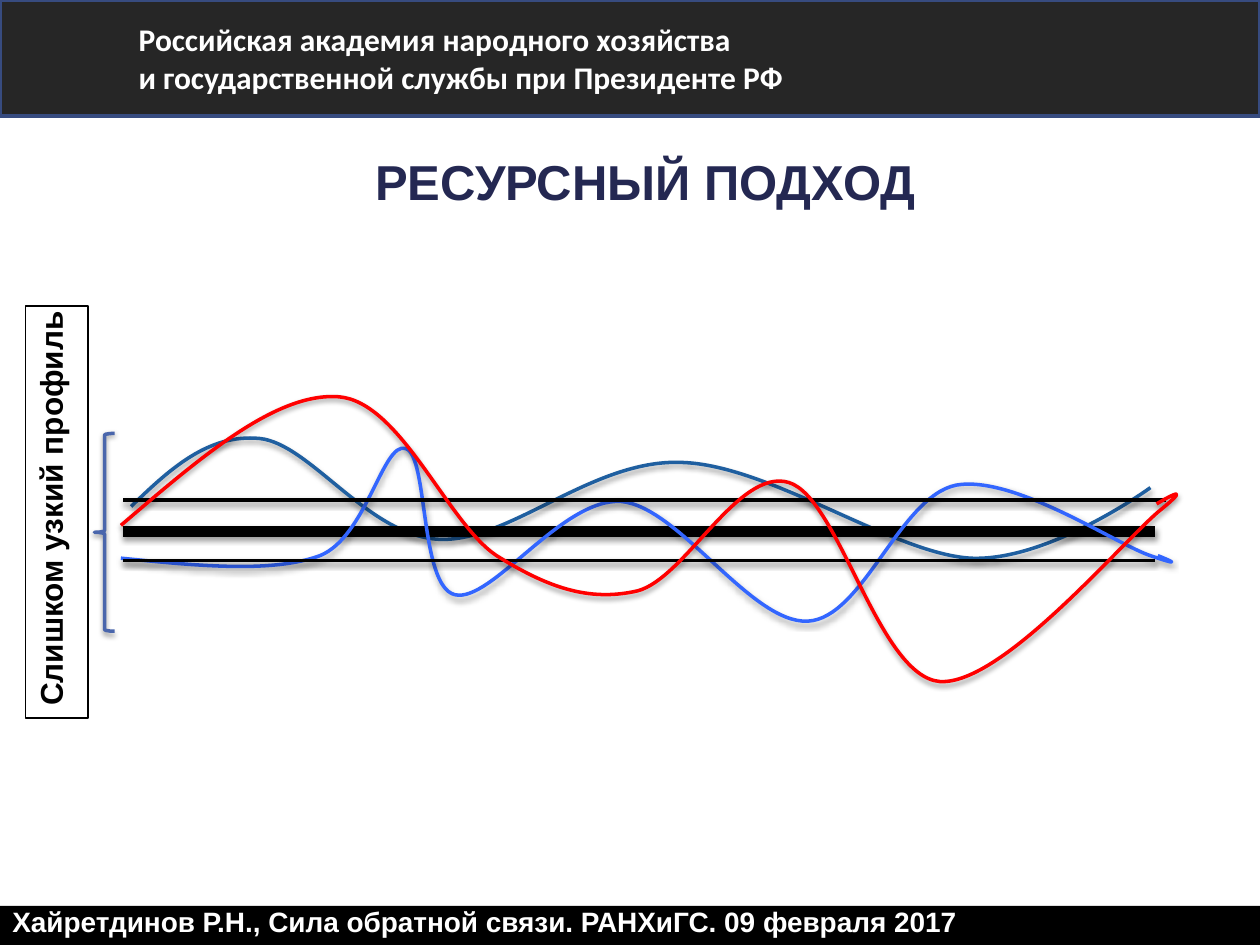
from lxml import etree
from pptx import Presentation
from pptx.dml.color import RGBColor
from pptx.enum.shapes import MSO_CONNECTOR, MSO_SHAPE
from pptx.enum.text import MSO_ANCHOR, MSO_AUTO_SIZE, PP_ALIGN
from pptx.oxml import parse_xml
from pptx.oxml.ns import nsdecls, qn
from pptx.util import Inches, Pt

RECT, BRACE = MSO_SHAPE.RECTANGLE, MSO_SHAPE.LEFT_BRACE
STRAIGHT = MSO_CONNECTOR.STRAIGHT
TOP, MIDDLE = MSO_ANCHOR.TOP, MSO_ANCHOR.MIDDLE
LEFT, CENTER = PP_ALIGN.LEFT, PP_ALIGN.CENTER
GROW = MSO_AUTO_SIZE.SHAPE_TO_FIT_TEXT
BLACK, WHITE = "000000", "FFFFFF"

# Start point, then two control points and an end point per curve segment
TEAL_WAVE = [
    (1.04, 4.02),
    (1.34, 3.73), (1.65, 3.44), (2.06, 3.48),
    (2.46, 3.52), (2.92, 4.25), (3.48, 4.28),
    (4.04, 4.31), (4.7, 3.64), (5.41, 3.67),
    (6.11, 3.69), (7.08, 4.39), (7.7, 4.43),
    (8.32, 4.46), (9.13, 3.87), (9.13, 3.87),
]
BLUE_WAVE = [
    (0.96, 4.43),
    (1.56, 4.49), (2.16, 4.55), (2.54, 4.41),
    (2.91, 4.26), (3.04, 3.5), (3.22, 3.56),
    (3.4, 3.61), (3.33, 4.65), (3.61, 4.72),
    (3.9, 4.79), (4.46, 3.95), (4.93, 3.98),
    (5.39, 4.02), (5.96, 4.95), (6.41, 4.93),
    (6.85, 4.91), (7.14, 3.94), (7.59, 3.85),
    (8.05, 3.77), (8.86, 4.32), (9.13, 4.41),
    (9.4, 4.5), (9.29, 4.45), (9.19, 4.41),
]
RED_WAVE = [
    (0.96, 4.17),
    (1.58, 3.64), (2.19, 3.11), (2.69, 3.15),
    (3.18, 3.19), (3.55, 4.15), (3.94, 4.41),
    (4.34, 4.66), (4.67, 4.78), (5.06, 4.69),
    (5.44, 4.59), (5.86, 3.71), (6.26, 3.83),
    (6.66, 3.95), (6.97, 5.37), (7.46, 5.41),
    (7.96, 5.44), (8.93, 4.27), (9.22, 4.04),
    (9.51, 3.8), (9.18, 4), (9.18, 4),
]


def rgb(color):
    return RGBColor.from_string(color)


def add_shadow(shape):
    """Give a shape or connector the soft shadow below it."""
    sp_pr = shape._element.spPr
    for old in sp_pr.findall(qn("a:effectLst")):
        sp_pr.remove(old)
    sp_pr.append(parse_xml(
        f'<a:effectLst {nsdecls("a")}>'
        f'<a:outerShdw blurRad="{Pt(3.1)}" dist="{Pt(1.6)}" dir="5400000" rotWithShape="0">'
        f'<a:srgbClr val="{BLACK}"><a:alpha val="38000"/></a:srgbClr>'
        '</a:outerShdw></a:effectLst>'))


class SlideBuilder:
    def __init__(self, slide, font="Arial"):
        self.shapes = slide.shapes
        self.font = font

    def shape(self, kind, x, y, w, h, fill=None, line=None, width=2):
        sp = self.shapes.add_shape(kind, Inches(x), Inches(y), Inches(w), Inches(h))
        self.style(sp, fill, line, width)
        return sp

    def style(self, sp, fill, line, width):
        sp.shadow.inherit = False
        if fill:
            sp.fill.solid()
            sp.fill.fore_color.rgb = rgb(fill)
        else:
            sp.fill.background()
        if line:
            sp.line.color.rgb = rgb(line)
            sp.line.width = Pt(width)
        else:
            sp.line.fill.background()

    def text_box(self, x, y, w, h, *args, **kwargs):
        sp = self.shapes.add_textbox(Inches(x), Inches(y), Inches(w), Inches(h))
        self.add_text(sp, *args, **kwargs)

    def add_text(self, sp, lines, size, color, font=None, align=LEFT, anchor=TOP, wrap=True):
        tf = sp.text_frame
        tf.word_wrap = wrap
        if not wrap:
            tf.auto_size = GROW
        tf.vertical_anchor = anchor
        p = tf.paragraphs[0]
        p.alignment = align
        for i, line in enumerate(lines):
            if i:
                p.add_line_break()
            r = p.add_run()
            r.text = line
            r.font.name = font or self.font
            r.font.size = Pt(size)
            r.font.bold = True
            r.font.color.rgb = rgb(color)

    def level(self, x1, x2, y, width):
        """Draw a horizontal black line."""
        line = self.shapes.add_connector(STRAIGHT, Inches(x1), Inches(y), Inches(x2), Inches(y))
        line.line.color.rgb = rgb(BLACK)
        line.line.width = Pt(width)
        add_shadow(line)

    def wave(self, points, color):
        """Draw an open outline whose points are grouped into cubic curves."""
        start, *rest = [(Inches(x), Inches(y)) for x, y in points]
        builder = self.shapes.build_freeform(*start)
        builder.add_line_segments(rest, close=False)
        sp = builder.convert_to_shape()
        outline = sp._element.find(".//" + qn("a:path"))
        segments = outline.findall(qn("a:lnTo"))
        for i in range(0, len(segments), 3):
            curve = etree.SubElement(outline, qn("a:cubicBezTo"))
            for segment in segments[i:i + 3]:
                curve.append(segment[0])
                outline.remove(segment)
        self.style(sp, None, color, 2)
        add_shadow(sp)


def main():
    prs = Presentation()
    prs.slide_width, prs.slide_height = Inches(10), Inches(7.5)
    s = SlideBuilder(prs.slides.add_slide(prs.slide_layouts[6]))

    s.shape(RECT, 0, 7.19, 10, 0.31, fill=BLACK)
    s.text_box(0, 7.13, 7.8, 0.37,
               ["Хайретдинов Р.Н., Сила обратной связи. РАНХиГС. 09 февраля 2017"],
               16, WHITE, wrap=False)
    header = s.shape(RECT, 0, 0, 10, 0.92, fill="262626", line="374B7F")
    header.text_frame.margin_left = Inches(1.1)
    s.add_text(header, ["Российская академия народного хозяйства",
                        "и государственной службы при Президенте РФ"],
               18, WHITE, font="Calibri", anchor=MIDDLE)
    s.text_box(0.83, 1.15, 8.58, 0.57, ["РЕСУРСНЫЙ ПОДХОД"], 28, "242852",
               align=CENTER, anchor=MIDDLE)

    s.wave(TEAL_WAVE, "1F5FA0")
    s.level(0.98, 9.17, 4.22, 6)
    s.wave(BLUE_WAVE, "3366FF")
    s.level(0.98, 9.17, 4.45, 2)
    s.level(0.98, 9.25, 3.97, 2)

    brace = s.shape(BRACE, 0.75, 3.44, 0.16, 1.57, line="4A66AC")
    add_shadow(brace)
    label = s.shape(RECT, 0.2, 2.43, 0.5, 3.27, line=BLACK, width=0.75)
    s.add_text(label, ["Слишком узкий профиль"], 18, BLACK, wrap=False)
    label.text_frame._txBody.bodyPr.set("vert", "vert270")

    s.wave(RED_WAVE, "FF0000")
    prs.save("out.pptx")


if __name__ == "__main__":
    main()
